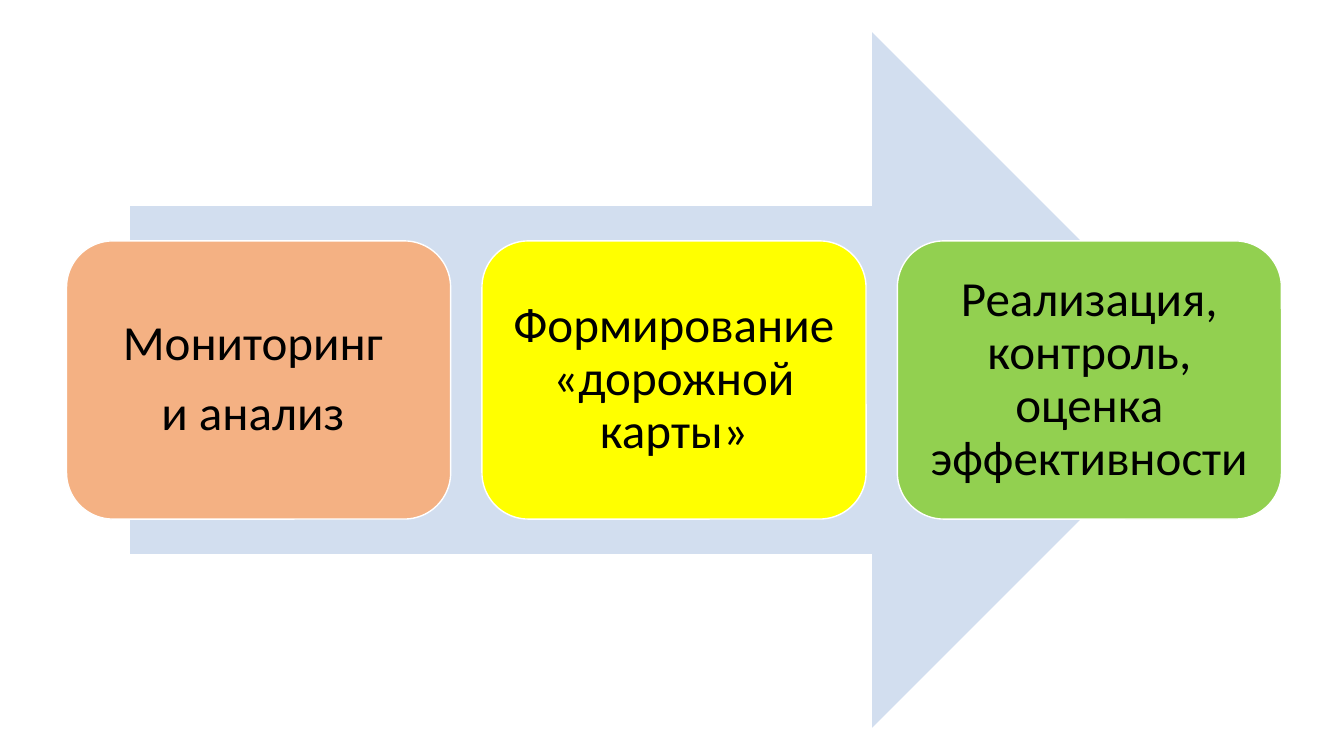
from pptx import Presentation
from pptx.dml.color import RGBColor
from pptx.enum.shapes import MSO_SHAPE
from pptx.enum.text import MSO_ANCHOR, PP_ALIGN
from pptx.util import Inches, Pt

PALE_BLUE = RGBColor(0xD2, 0xDE, 0xEF)
ORANGE = RGBColor(0xF4, 0xB1, 0x83)
YELLOW = RGBColor(0xFF, 0xFF, 0x00)
GREEN = RGBColor(0x92, 0xD0, 0x50)
WHITE = RGBColor(0xFF, 0xFF, 0xFF)
BLACK = RGBColor(0x00, 0x00, 0x00)

# Stage boxes: one row with an equal step
BOX_LEFT, BOX_TOP, BOX_WIDTH, BOX_HEIGHT = 0.66, 2.39, 3.81, 2.76
BOX_STEP = 4.12

STAGES = [
    (ORANGE, ["Мониторинг ", "и анализ "]),
    (YELLOW, ["Формирование «дорожной карты»"]),
    (GREEN, ["Реализация, контроль, оценка эффективности "]),
]

FRAME_FORMAT = {
    "word_wrap": True,
    "vertical_anchor": MSO_ANCHOR.MIDDLE,
    "margin_left": Inches(0.15),
    "margin_right": Inches(0.15),
    "margin_top": Inches(0.15),
    "margin_bottom": Inches(0.15),
}
PARAGRAPH_FORMAT = {
    "alignment": PP_ALIGN.CENTER,
    "line_spacing": 0.9,
    "space_after": Pt(12.25),
}
FONT_FORMAT = {"name": "Calibri", "size": Pt(35)}


def apply_format(target, values):
    for name, value in values.items():
        setattr(target, name, value)


def add_filled_shape(slide, kind, left, top, width, height, color):
    shape = slide.shapes.add_shape(
        kind, Inches(left), Inches(top), Inches(width), Inches(height)
    )
    shape.shadow.inherit = False
    shape.fill.solid()
    shape.fill.fore_color.rgb = color
    return shape


def add_arrow(slide):
    arrow = add_filled_shape(
        slide, MSO_SHAPE.RIGHT_ARROW, 1.29, 0.32, 10.81, 6.9, PALE_BLUE
    )
    arrow.line.fill.background()


def add_stage(slide, index, color, lines):
    box = add_filled_shape(
        slide, MSO_SHAPE.ROUNDED_RECTANGLE, BOX_LEFT + index * BOX_STEP,
        BOX_TOP, BOX_WIDTH, BOX_HEIGHT, color
    )
    box.line.color.rgb = WHITE
    box.line.width = Pt(1)
    frame = box.text_frame
    apply_format(frame, FRAME_FORMAT)
    frame.text = "\n".join(lines)
    for paragraph in frame.paragraphs:
        apply_format(paragraph, PARAGRAPH_FORMAT)
        for run in paragraph.runs:
            apply_format(run.font, FONT_FORMAT)
            run.font.color.rgb = BLACK


def main():
    presentation = Presentation()
    presentation.slide_width = Inches(13.33)
    presentation.slide_height = Inches(7.5)
    slide = presentation.slides.add_slide(presentation.slide_layouts[6])

    # Background arrow
    add_arrow(slide)

    # Process stages
    for index, (color, lines) in enumerate(STAGES):
        add_stage(slide, index, color, lines)

    presentation.save("out.pptx")


if __name__ == "__main__":
    main()
